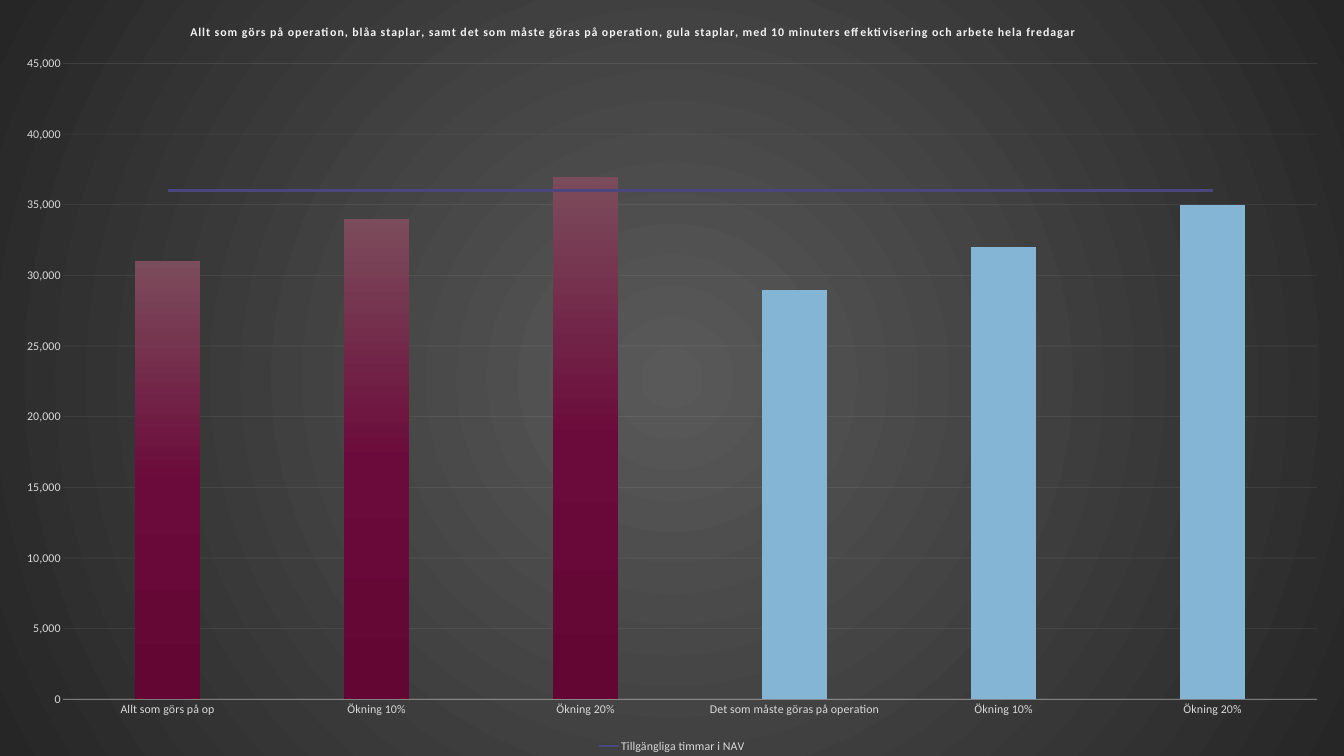
import dataclasses

import pptx
import pptx.chart.data
import pptx.dml.color
import pptx.enum.chart
import pptx.oxml
import pptx.oxml.ns
import pptx.util

EMU_PER_PX = 14961
PAGE_WIDTH, PAGE_HEIGHT = 1344, 756

TITLE = ("Allt som görs på operation, blåa staplar, samt det som måste göras på operation, "
         "gula staplar, med 10 minuters effektivisering och arbete hela fredagar")
CATEGORIES = ["Allt som görs på op", "Ökning 10%", "Ökning 20%",
              "Det som måste göras på operation", "Ökning 10%", "Ökning 20%"]
HOURS = [31000, 34000, 37000, 29000, 32000, 35000]
AVAILABLE_HOURS = 36000


@dataclasses.dataclass(frozen=True)
class Theme:
    font: str = "Calibri"
    text_size: int = 14
    title_color: str = "F2F2F2"
    label_color: str = "D9D9D9"
    rule_color: str = "F2F2F2"
    limit_color: str = "4B467D"
    must_do_color: str = "84B5D5"
    all_work_stops: tuple = ((0, "7B4C5B"), (50, "6B0B3B"), (100, "630634"))
    backdrop_stops: tuple = ((0, "595959"), (100, "262626"))


THEME = Theme()


def px(length):
    return pptx.util.Emu(length * EMU_PER_PX)


def rgb(color):
    return pptx.dml.color.RGBColor.from_string(color)


def xml(markup):
    tag, rest = markup.split(">", 1)
    slash = "/" if tag.endswith("/") else ""
    names = pptx.oxml.ns.nsdecls("c", "a")
    return pptx.oxml.parse_xml(f"{tag.rstrip('/')} {names}{slash}>{rest}")


def gradient(stops, direction):
    marks = "".join(f'<a:gs pos="{place * 1000}"><a:srgbClr val="{color}"/></a:gs>'
                    for place, color in stops)
    return f"<a:gradFill><a:gsLst>{marks}</a:gsLst>{direction}</a:gradFill>"


def style_font(font, color, bold=False):
    font.name = THEME.font
    font.size = pptx.util.Pt(THEME.text_size)
    font.bold = bold
    font.color.rgb = rgb(color)


def style_line(line, color, width):
    line.color.rgb = rgb(color)
    line.width = pptx.util.Pt(width)


def set_alpha(chart, query, percent):
    for color in chart.element.xpath(query):
        color.append(xml(f'<a:alpha val="{percent * 1000}"/>'))


def set_layout(parent, index, target="", **fractions):
    for layout in parent.xpath("c:layout"):
        parent.remove(layout)
    inner = f'<c:layoutTarget val="{target}"/>' if target else ""
    modes = "".join(f'<c:{key}Mode val="edge"/>' for key in ("x", "y"))
    sizes = "".join(f'<c:{key} val="{value}"/>' for key, value in fractions.items())
    parent.insert(index, xml(
        f"<c:layout><c:manualLayout>{inner}{modes}{sizes}</c:manualLayout></c:layout>"))


def add_hours_chart(page):
    data = pptx.chart.data.CategoryChartData(number_format="#,##0")
    data.categories = CATEGORIES
    data.add_series("Series 1", HOURS)
    data.add_series("Tillgängliga timmar i NAV", [AVAILABLE_HOURS] * len(CATEGORIES))
    kind = pptx.enum.chart.XL_CHART_TYPE.COLUMN_CLUSTERED
    frame = page.shapes.add_chart(kind, 0, 0, px(PAGE_WIDTH), px(PAGE_HEIGHT), data)
    chart = frame.chart
    style_font(chart.font, THEME.label_color)
    return chart


def move_limit_to_line(chart):
    bars = chart.element.xpath(".//c:barChart")[0]
    limit = bars.xpath("c:ser")[1]
    for flag in limit.xpath("c:invertIfNegative"):
        limit.remove(flag)
    axes = "".join(f'<c:axId val="{axis.get("val")}"/>' for axis in bars.xpath("c:axId"))
    lines = xml('<c:lineChart><c:grouping val="standard"/><c:varyColors val="0"/>'
                f'<c:marker val="1"/>{axes}</c:lineChart>')
    lines.insert(2, limit)
    bars.addnext(lines)


def style_backdrop(chart):
    circle = ('<a:path path="circle"><a:fillToRect l="50000" t="50000" '
              'r="50000" b="50000"/></a:path>')
    fill = gradient(THEME.backdrop_stops, circle)
    chart.element.xpath("c:chart")[0].addnext(
        xml(f"<c:spPr>{fill}<a:ln><a:noFill/></a:ln></c:spPr>"))


def style_series(chart):
    columns, lines = chart.plots
    columns.gap_width = 219
    columns.vary_by_categories = False
    work = columns.series[0]
    work.format.fill.solid()
    solid = chart.element.xpath(".//c:barChart/c:ser/c:spPr/a:solidFill")[0]
    solid.getparent().replace(
        solid, xml(gradient(THEME.all_work_stops, '<a:lin ang="5400000" scaled="0"/>')))
    for index in range(3, len(CATEGORIES)):
        fill = work.points[index].format.fill
        fill.solid()
        fill.fore_color.rgb = rgb(THEME.must_do_color)
    limit = lines.series[0]
    limit.smooth = False
    limit.marker.style = pptx.enum.chart.XL_MARKER_STYLE.NONE
    style_line(limit.format.line, THEME.limit_color, 2.75)


def style_axes(chart):
    hours = chart.value_axis
    hours.minimum_scale, hours.maximum_scale, hours.major_unit = 0, 45000, 5000
    hours.tick_labels.number_format = "#,##0"
    hours.tick_labels.number_format_is_linked = False
    for axis in (chart.category_axis, hours):
        axis.major_tick_mark = pptx.enum.chart.XL_TICK_MARK.NONE
        axis.minor_tick_mark = pptx.enum.chart.XL_TICK_MARK.NONE
        style_font(axis.tick_labels.font, THEME.label_color)
    hours.format.line.fill.background()
    style_line(chart.category_axis.format.line, THEME.rule_color, 1)
    style_line(hours.major_gridlines.format.line, THEME.rule_color, 0.75)
    set_alpha(chart, ".//c:catAx/c:spPr//a:srgbClr", 54)
    set_alpha(chart, ".//c:majorGridlines//a:srgbClr", 10)
    set_layout(chart.element.xpath(".//c:plotArea")[0], 0, "inner",
               x=0.047, y=0.084, w=0.933, h=0.841)


def add_title(chart):
    frame = chart.chart_title.text_frame
    frame.text = TITLE
    span = frame.paragraphs[0].runs[0]
    style_font(span.font, THEME.title_color, bold=True)
    title = chart.element.xpath(".//c:title")[0]
    title.xpath(".//a:rPr")[0].set("spc", "100")
    set_layout(title, 1, x=0.14, y=0.028)


def add_legend(chart):
    chart.has_legend = True
    chart.legend.position = pptx.enum.chart.XL_LEGEND_POSITION.BOTTOM
    chart.legend.include_in_layout = False
    style_font(chart.legend.font, THEME.label_color)
    chart.element.xpath(".//c:legendPos")[0].addnext(
        xml('<c:legendEntry><c:idx val="0"/><c:delete val="1"/></c:legendEntry>'))


def main():
    deck = pptx.Presentation()
    deck.slide_width, deck.slide_height = px(PAGE_WIDTH), px(PAGE_HEIGHT)
    page = deck.slides.add_slide(deck.slide_layouts[6])
    chart = add_hours_chart(page)
    move_limit_to_line(chart)
    style_backdrop(chart)
    style_series(chart)
    style_axes(chart)
    add_title(chart)
    add_legend(chart)
    deck.save("out.pptx")


if __name__ == "__main__":
    main()
